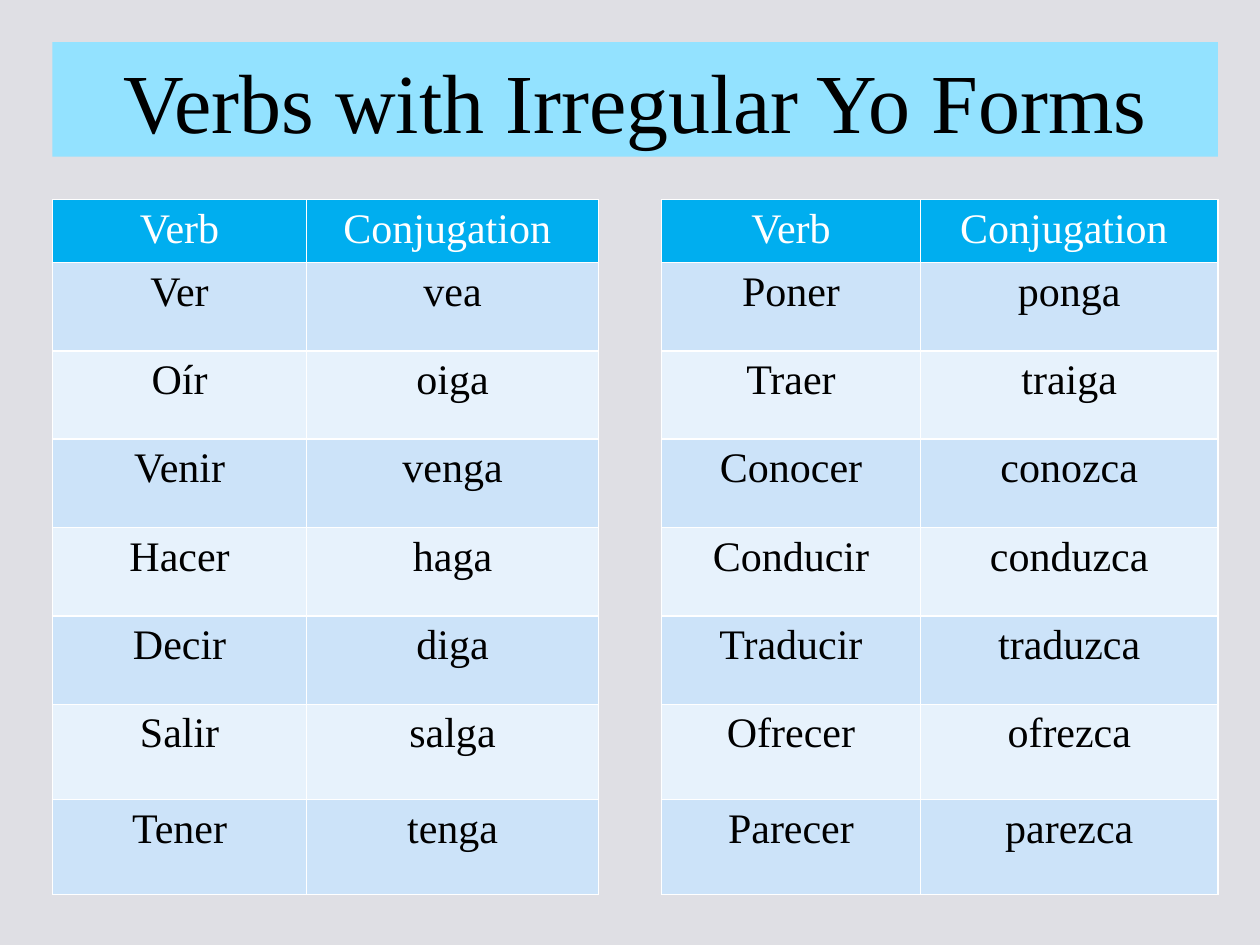
from lxml import etree
from pptx import Presentation
from pptx import util as u
from pptx.dml.color import RGBColor
from pptx.enum import shapes, text
from pptx.oxml import ns

BACKGROUND = RGBColor(0xDF, 0xDF, 0xE4)
BANNER = RGBColor(0x93, 0xE2, 0xFF)
HEADER = RGBColor(0x00, 0xAE, 0xEF)
BANDS = (RGBColor(0xE7, 0xF2, 0xFC), RGBColor(0xCC, 0xE3, 0xF9))
BLACK = RGBColor(0x00, 0x00, 0x00)
WHITE = RGBColor(0xFF, 0xFF, 0xFF)

HEADINGS = ("Verb", "Conjugation ")
LEFT_VERBS = (
    ("Ver", "vea"), ("Oír", "oiga"), ("Venir", "venga"), ("Hacer", "haga"),
    ("Decir", "diga"), ("Salir", "salga"), ("Tener", "tenga"),
)
RIGHT_VERBS = (
    ("Poner", "ponga"), ("Traer", "traiga"), ("Conocer", "conozca"),
    ("Conducir", "conduzca"), ("Traducir", "traduzca"),
    ("Ofrecer", "ofrezca"), ("Parecer", "parezca"),
)
ROW_HEIGHTS = (36, *[50.5] * 5, *[54.4] * 2)


class VerbSlide:
    def __init__(self, presentation, font="Times New Roman"):
        self.slide = presentation.slides.add_slide(presentation.slide_layouts[6])
        self.font = font
        self.paint(self.slide.background.fill, BACKGROUND)

    def paint(self, fill, color):
        fill.solid()
        fill.fore_color.rgb = color

    def label(self, frame, words, size, color):
        paragraph = frame.paragraphs[0]
        paragraph.alignment = text.PP_ALIGN.CENTER
        run = paragraph.add_run()
        run.text = words
        for name, value in {"name": self.font, "size": u.Pt(size)}.items():
            setattr(run.font, name, value)
        run.font.color.rgb = color

    def banner(self, words, left, top, width, height):
        shape = self.slide.shapes.add_shape(
            shapes.MSO_SHAPE.RECTANGLE, *map(u.Pt, (left, top, width, height)))
        shape.shadow.inherit = False
        shape.line.fill.background()
        self.paint(shape.fill, BANNER)
        layout = {"word_wrap": True, "vertical_anchor": text.MSO_ANCHOR.BOTTOM}
        for name, value in layout.items():
            setattr(shape.text_frame, name, value)
        self.label(shape.text_frame, words, 48, BLACK)

    def borders(self, cell):
        properties = cell._tc.get_or_add_tcPr()
        for side in ("lnL", "lnR", "lnT", "lnB"):
            line = etree.SubElement(properties, ns.qn(f"a:{side}"), w=str(u.Pt(1)))
            fill = etree.SubElement(line, ns.qn("a:solidFill"))
            etree.SubElement(fill, ns.qn("a:srgbClr"), val=str(WHITE))

    def table(self, verbs, left, top, widths):
        rows = (HEADINGS, *verbs)
        table = self.slide.shapes.add_table(
            len(rows), len(widths), u.Pt(left), u.Pt(top),
            u.Pt(sum(widths)), u.Pt(sum(ROW_HEIGHTS))).table
        for column, width in zip(table.columns, widths):
            column.width = u.Pt(width)
        for index, (row, height) in enumerate(zip(table.rows, ROW_HEIGHTS)):
            row.height = u.Pt(height)
            for cell, words in zip(row.cells, rows[index]):
                self.borders(cell)
                self.paint(cell.fill, BANDS[index % 2] if index else HEADER)
                self.label(cell.text_frame, words, 24, BLACK if index else WHITE)


def main():
    presentation = Presentation()
    presentation.slide_width, presentation.slide_height = u.Pt(720), u.Pt(540)
    slide = VerbSlide(presentation)
    slide.banner("Verbs with Irregular Yo Forms", 30, 24, 666, 65.5)
    slide.table(LEFT_VERBS, 30, 114, (145.3, 166.7))
    slide.table(RIGHT_VERBS, 378, 114, (148, 170))
    presentation.save("out.pptx")


if __name__ == "__main__":
    main()
